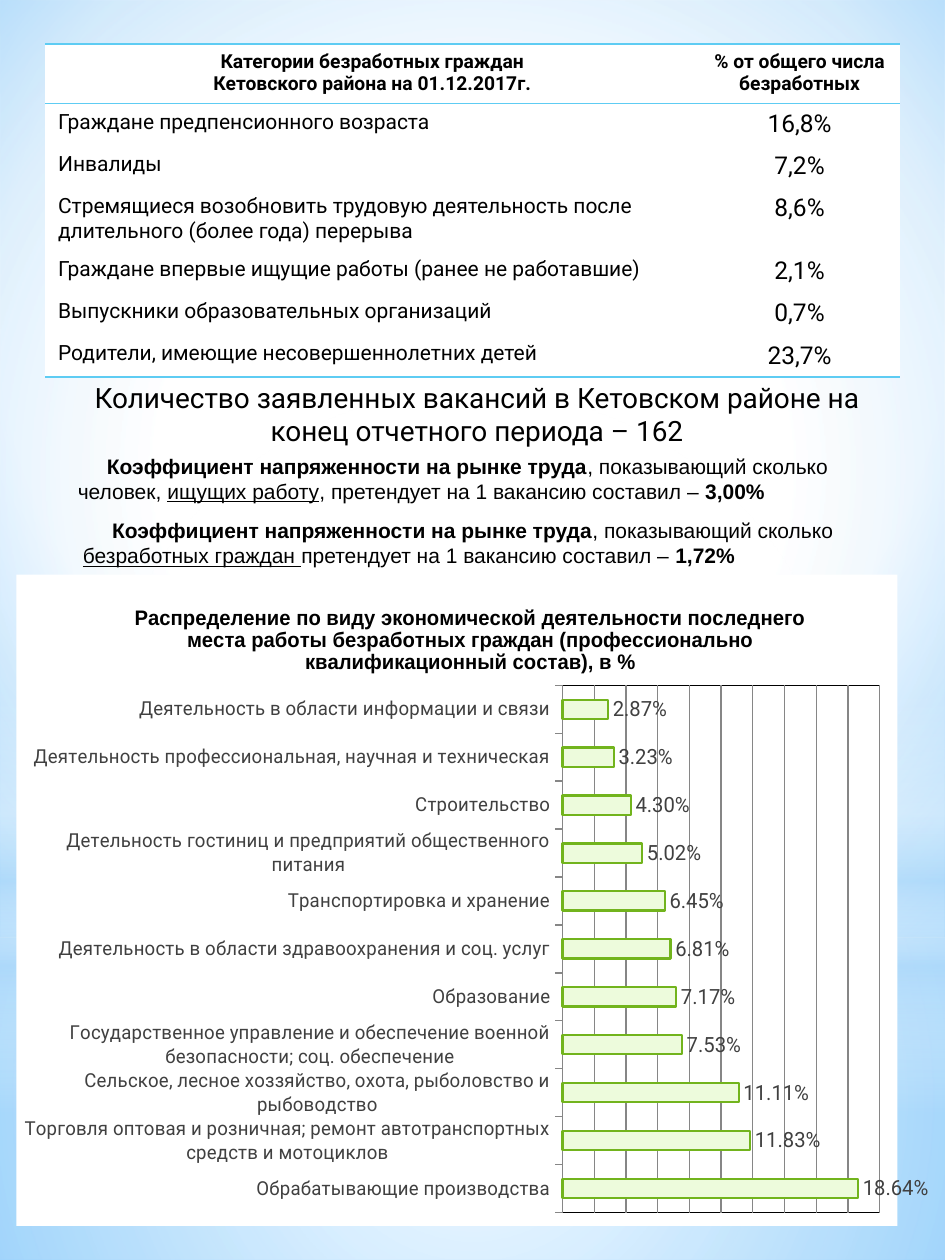
from pptx import Presentation, util as u
from pptx.chart.data import CategoryChartData
from pptx.dml.color import RGBColor
from pptx.enum import chart as charts, shapes, text
from pptx.oxml import parse_xml
from pptx.oxml.ns import nsdecls, qn

NO_STYLE = "{2D5ABB26-0587-4C30-8999-92F81FD0307C}"
CENTER = text.PP_ALIGN.CENTER
LEFT = text.PP_ALIGN.LEFT


def color(value):
    return RGBColor.from_string(value)


def gradient(stops, center=None):
    marks = "".join(
        f'<a:gs pos="{pos * 1000}"><a:srgbClr val="{value}">'
        f'<a:alpha val="{alpha * 1000}"/></a:srgbClr></a:gs>'
        for pos, value, alpha in stops)
    if center:
        sides = " ".join(f'{side}="{share * 1000}"' for side, share in zip("ltrb", center))
        direction = f'<a:path path="circle"><a:fillToRect {sides}/></a:path>'
    else:
        direction = '<a:lin ang="5400000" scaled="0"/>'
    return parse_xml(f'<a:gradFill {nsdecls("a")} rotWithShape="1">'
                     f'<a:gsLst>{marks}</a:gsLst>{direction}</a:gradFill>')


def place(parent, x, y, w=None, h=None):
    values = {"xMode": "edge", "yMode": "edge", "x": x, "y": y, "w": w, "h": h}
    inner = '<c:layoutTarget val="inner"/>' if w else ""
    items = "".join(f'<c:{name} val="{value}"/>'
                    for name, value in values.items() if value is not None)
    for old in parent.findall(qn("c:layout")):
        parent.remove(old)
    layout = parse_xml(f'<c:layout {nsdecls("c")}><c:manualLayout>{inner}{items}'
                       '</c:manualLayout></c:layout>')
    before = parent.find(qn("c:tx"))
    if before is None:
        parent.insert(0, layout)
    else:
        before.addnext(layout)


class Sheet:
    body, heading = "Roboto", "Arial"
    ink, label, accent, white = "000000", "404040", "5ECCF3", "FFFFFF"

    def __init__(self, page):
        self.page = page

    def font(self, font, size, name=None, value=None, bold=False):
        font.size, font.name, font.bold = u.Pt(size), name or self.body, bold
        font.color.rgb = color(value or self.ink)

    def background(self, stops, center):
        self.page.background.fill.solid()
        old = self.page.element.find(".//" + qn("a:solidFill"))
        old.getparent().replace(old, gradient(stops, center))

    def glow(self, kind, top, height, stops, center=None):
        shape = self.page.shapes.add_shape(kind, 0, u.Pt(top), u.Pt(540), u.Pt(height))
        shape.shadow.inherit = False
        shape.line.fill.background()
        shape.fill.solid()
        old = shape.element.spPr.find(qn("a:solidFill"))
        old.getparent().replace(old, gradient(stops, center))

    def text(self, left, top, width, height, spans, size, name, align=LEFT, indent=0):
        box = self.page.shapes.add_textbox(u.Pt(left), u.Pt(top), u.Pt(width), u.Pt(height))
        box.text_frame.word_wrap = True
        para = box.text_frame.paragraphs[0]
        para.alignment = align
        self.font(para.font, size, name)
        para._p.get_or_add_pPr().set("indent", str(u.Pt(indent)))
        for words, style in spans:
            span = para.add_run()
            span.text = words
            self.font(span.font, size, name, bold="b" in style)
            span.font.underline = "u" in style

    def border(self, cell, side):
        cell._tc.get_or_add_tcPr().insert(0, parse_xml(
            f'<a:{side} {nsdecls("a")} w="12700"><a:solidFill>'
            f'<a:srgbClr val="{self.accent}"/></a:solidFill></a:{side}>'))

    def table(self, left, top, widths, heights, rows):
        table = self.page.shapes.add_table(
            len(rows), len(widths), u.Pt(left), u.Pt(top),
            u.Pt(sum(widths)), u.Pt(sum(heights))).table
        table.first_row = table.horz_banding = False
        table._tbl.tblPr.find(qn("a:tableStyleId")).text = NO_STYLE
        for column, width in zip(table.columns, widths):
            column.width = u.Pt(width)
        for r, (row, height) in enumerate(zip(rows, heights)):
            table.rows[r].height = u.Pt(height)
            for c, words in enumerate(row):
                cell = table.cell(r, c)
                cell.fill.solid()
                cell.fill.fore_color.rgb = color(self.white)
                cell.text = words
                for para in cell.text_frame.paragraphs:
                    para.alignment = CENTER if r == 0 or c == 1 else LEFT
                    self.font(para.font, 11 if r == 0 else (12, 14)[c], bold=r == 0)
                if r in (0, len(rows) - 1):
                    self.border(cell, "lnB")
                if r == 0:
                    self.border(cell, "lnT")

    def bars(self, left, top, width, height, title, values):
        data = CategoryChartData(number_format="0.00%")
        data.categories = list(values)
        data.add_series("Series 1", list(values.values()))
        chart = self.page.shapes.add_chart(
            charts.XL_CHART_TYPE.BAR_CLUSTERED, u.Pt(left), u.Pt(top),
            u.Pt(width), u.Pt(height), data).chart
        self.font(chart.font, 12, value=self.label)
        chart.has_legend = False
        chart.has_title = True
        para = chart.chart_title.text_frame.paragraphs[0]
        para.text = title
        self.font(para.font, 12, self.heading, bold=True)
        place(chart.chart_title._element, 0.13, 0.04)

        names, scale = chart.category_axis, chart.value_axis
        self.font(names.tick_labels.font, 11, value=self.label)
        names.major_tick_mark = charts.XL_TICK_MARK.OUTSIDE
        names.format.line.color.rgb = color("868686")
        scale.visible = False
        scale.minimum_scale, scale.maximum_scale, scale.major_unit = 0, 0.2, 0.02
        scale.has_major_gridlines = True
        scale.major_gridlines.format.line.color.rgb = color("868686")

        plot = chart.plots[0]
        plot.gap_width, plot.vary_by_categories = 150, False
        plot.has_data_labels = True
        labels = plot.data_labels
        labels.show_value = True
        labels.number_format, labels.number_format_is_linked = "0.00%", False
        labels.position = charts.XL_LABEL_POSITION.OUTSIDE_END
        self.font(labels.font, 12, value=self.label)
        look = plot.series[0].format
        look.fill.solid()
        look.fill.fore_color.rgb = color("EDFBDC")
        look.line.color.rgb = color("72B41D")
        look.line.width = u.Pt(1.25)

        area = chart._chartSpace.chart.plotArea
        place(area, 0.62, 0.17, 0.36, 0.81)
        area.append(parse_xml(
            f'<c:spPr {nsdecls("c", "a")}><a:noFill/><a:ln w="9525"><a:solidFill>'
            f'<a:srgbClr val="{self.ink}"/></a:solidFill></a:ln></c:spPr>'))
        chart._chartSpace.chart.addnext(parse_xml(
            f'<c:spPr {nsdecls("c", "a")}><a:solidFill><a:srgbClr val="{self.white}"/>'
            '</a:solidFill><a:ln><a:noFill/></a:ln></c:spPr>'))


def main():
    deck = Presentation()
    deck.slide_width, deck.slide_height = u.Pt(540), u.Pt(720)
    sheet = Sheet(deck.slides.add_slide(deck.slide_layouts[6]))
    white, sky, middle = "FFFFFF", "B4DCFA", (50, 50, 50, 50)
    rect, oval = shapes.MSO_SHAPE.RECTANGLE, shapes.MSO_SHAPE.OVAL

    sheet.background([(0, white, 100), (60, white, 100), (100, "5BB9FF", 100)], (20, 10, 20, 60))
    sheet.glow(rect, 535.7, 184.3, [(0, white, 91), (37, white, 76), (100, sky, 79)], middle)
    sheet.glow(rect, 0, 535.7, [(0, white, 89), (48, white, 62), (100, sky, 79)], middle)
    sheet.glow(rect, 395.3, 239.8, [(0, white, 0), (29, white, 30), (45, sky, 40),
                                    (55, white, 26), (65, sky, 60), (100, white, 0)])
    sheet.glow(oval, 167.8, 535.7, [(0, white, 100), (56, white, 0)], middle)

    sheet.bars(9.4, 328.3, 521.3, 372.2,
               "Распределение по виду экономической деятельности последнего места работы "
               "безработных граждан (профессионально квалификационный состав), в %", {
        "Обрабатывающие производства": 0.1864,
        "Торговля оптовая и розничная; ремонт автотранспортных средств и мотоциклов": 0.1183,
        "Сельское, лесное хоззяйство, охота, рыболовство и рыбоводство": 0.1111,
        "Государственное управление и обеспечение военной безопасности; соц. обеспечение": 0.0753,
        "Образование": 0.0717,
        "Деятельность в области здравоохранения и соц. услуг": 0.0681,
        "Транспортировка и хранение": 0.0645,
        "Детельность гостиниц и предприятий общественного питания": 0.0502,
        "Строительство": 0.043,
        "Деятельность профессиональная, научная и техническая": 0.0323,
        "Деятельность в области информации и связи": 0.0287})

    ratio = ("Коэффициент напряженности на рынке труда", "b")
    sheet.text(37.4, 255.6, 466.6, 36, [
        ratio, (", показывающий сколько человек, ", ""), ("ищущих работу", "u"),
        (", претендует на 1 вакансию составил – ", ""), ("3,00%", "b")],
        12, sheet.heading, indent=16.6)
    sheet.text(34.6, 213.8, 475.9, 46, [
        ("Количество заявленных вакансий в Кетовском районе на конец отчетного периода – 162", "")],
        16, sheet.body, CENTER)
    sheet.table(26, 25.2, [373.7, 114.5], [34, 24, 24, 36, 24, 24, 24], [
        ("Категории безработных граждан\nКетовского района на 01.12.2017г.",
         "% от общего числа безработных"),
        ("Граждане предпенсионного возраста", "16,8%"),
        ("Инвалиды", "7,2%"),
        ("Стремящиеся возобновить трудовую деятельность после длительного (более года) перерыва",
         "8,6%"),
        ("Граждане впервые ищущие работы (ранее не работавшие)", "2,1%"),
        ("Выпускники образовательных организаций", "0,7%"),
        ("Родители, имеющие несовершеннолетних детей", "23,7%")])
    sheet.text(40.3, 292.3, 475.9, 36, [
        ratio, (", показывающий сколько ", ""), ("безработных граждан ", "u"),
        ("претендует на 1 вакансию составил – ", ""), ("1,72%", "b")],
        12, sheet.heading, indent=16.6)
    deck.save("out.pptx")


if __name__ == "__main__":
    main()
